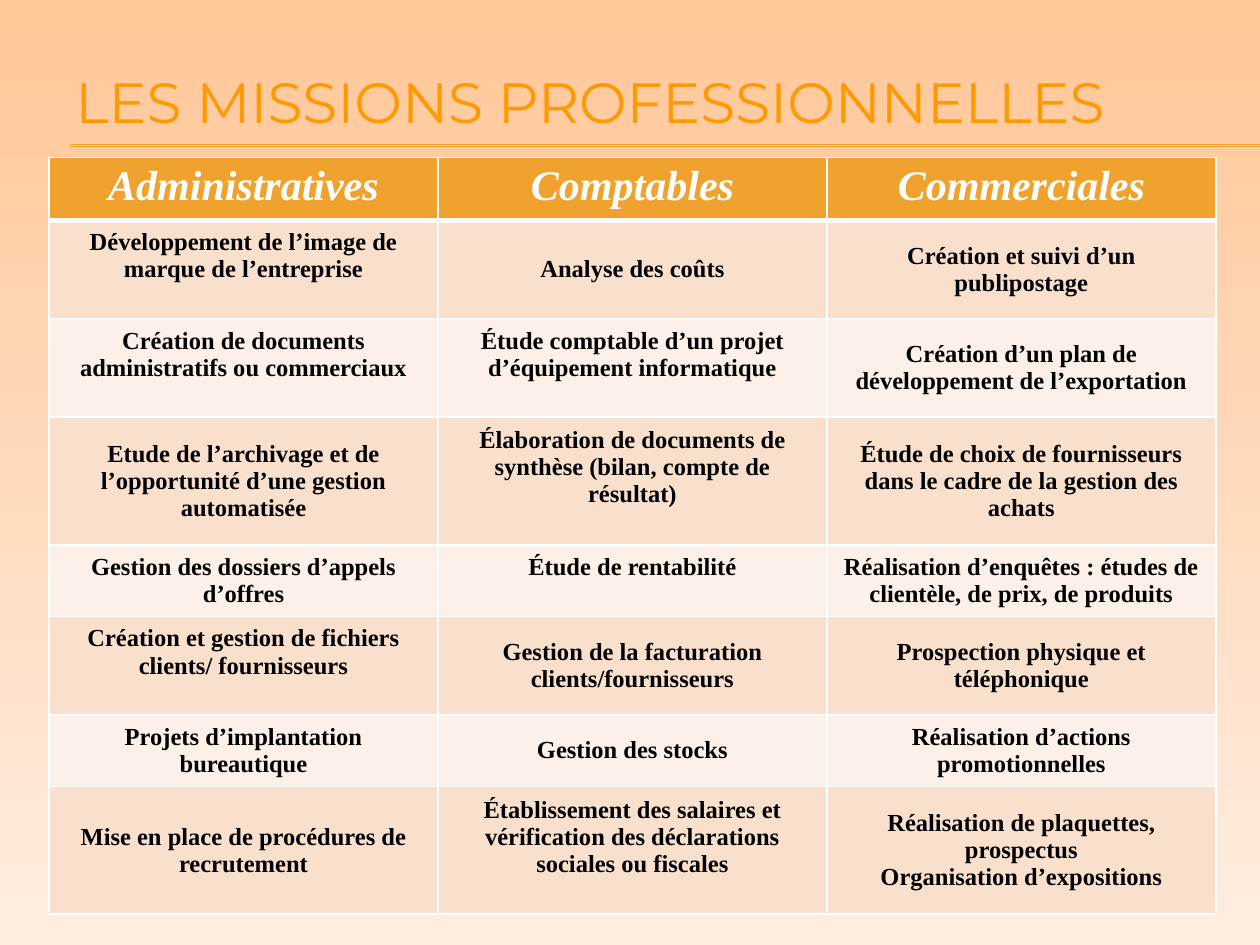
from lxml import etree
from pptx import Presentation
from pptx import util as u
from pptx.dml.color import RGBColor
from pptx.enum import shapes, text
from pptx.oxml.ns import qn

ORANGE, WHITE, BLACK = "F0A22E", "FFFFFF", "000000"
BANDS = ("F9E0CD", "FCF0E8")
TITLE_FONT = {"name": "Montserrat", "size": u.Pt(32.4)}
HEADER_FONT = {"name": "Times New Roman", "size": u.Pt(24), "bold": True, "italic": True}
MISSION_FONT = {"name": "Times New Roman", "size": u.Pt(14), "bold": True, "italic": False}

ROW_HEIGHTS = (1.27, 1.96, 1.96, 2.51, 1.37, 1.96, 1.37, 2.51)
MISSIONS = (
    ("Administratives", "Comptables", "Commerciales"),
    ("Développement de l’image de marque de l’entreprise",
     "Analyse des coûts",
     "Création et suivi d’un publipostage"),
    ("Création de documents administratifs ou commerciaux",
     "Étude comptable d’un projet d’équipement informatique",
     "Création d’un plan de développement de l’exportation"),
    ("Etude de l’archivage et de l’opportunité d’une gestion automatisée",
     "Élaboration de documents de synthèse (bilan, compte de résultat)",
     "Étude de choix de fournisseurs dans le cadre de la gestion des achats"),
    ("Gestion des dossiers d’appels d’offres",
     "Étude de rentabilité",
     "Réalisation d’enquêtes : études de clientèle, de prix, de produits"),
    ("Création et gestion de fichiers clients/ fournisseurs",
     "Gestion de la facturation clients/fournisseurs",
     "Prospection physique et téléphonique"),
    ("Projets d’implantation bureautique",
     "Gestion des stocks",
     "Réalisation d’actions promotionnelles"),
    ("Mise en place de procédures de recrutement",
     "Établissement des salaires et vérification des déclarations sociales ou fiscales",
     "Réalisation de plaquettes, prospectus\nOrganisation d’expositions"),
)
# Cells (row, column) whose text sits half a line above the middle
RAISED = {(1, 0), (2, 0), (2, 1), (3, 1), (4, 1), (5, 0), (7, 1)}


def colour(hex_value):
    return RGBColor.from_string(hex_value)


def style(font, formats, hex_value):
    for key, value in formats.items():
        setattr(font, key, value)
    font.color.rgb = colour(hex_value)


def paint_background(slide):
    fill = slide.background.fill
    fill.gradient()
    fill.gradient_angle = 270
    for stop, hex_value in zip(fill.gradient_stops, ("FFC798", "FFEDE0")):
        stop.color.rgb = colour(hex_value)


def add_title(slide, left, top, width, height):
    # Heading
    heading = slide.shapes.add_textbox(u.Cm(left), u.Cm(top), u.Cm(width), u.Cm(height))
    frame = heading.text_frame
    frame.word_wrap = True
    frame.vertical_anchor = text.MSO_ANCHOR.MIDDLE
    frame.text = "LES MISSIONS PROFESSIONNELLES"
    style(frame.paragraphs[0].runs[0].font, TITLE_FONT, "FF9900")

    # Double rule below, running to the slide's right edge
    for offset in (1.62, 1.65):
        y = u.Cm(top + offset)
        rule = slide.shapes.add_connector(
            shapes.MSO_CONNECTOR.STRAIGHT, u.Cm(left + 0.15), y, u.Cm(25.4), y)
        rule.line.color.rgb = colour(ORANGE)
        rule.line.width = u.Pt(0.75)
        etree.SubElement(rule.element.spPr, qn("a:effectLst"))


def add_borders(cell, bottom_points):
    properties = cell._tc.get_or_add_tcPr()
    for side, points in (("L", 1), ("R", 1), ("T", 1), ("B", bottom_points)):
        border = etree.SubElement(properties, qn(f"a:ln{side}"), w=str(u.Pt(points)))
        paint = etree.SubElement(border, qn("a:solidFill"))
        etree.SubElement(paint, qn("a:srgbClr"), val=WHITE)


def fill_cell(cell, words, row, raised):
    header = row == 0
    add_borders(cell, 3 if header else 1)
    cell.fill.solid()
    cell.fill.fore_color.rgb = colour(ORANGE if header else BANDS[(row - 1) % 2])
    cell.vertical_anchor = text.MSO_ANCHOR.TOP if header else text.MSO_ANCHOR.MIDDLE
    if raised:
        cell.margin_bottom = u.Cm(0.67)
    cell.text = words
    for paragraph in cell.text_frame.paragraphs:
        paragraph.alignment = text.PP_ALIGN.CENTER
        style(paragraph.runs[0].font, HEADER_FONT if header else MISSION_FONT,
              WHITE if header else BLACK)


def add_missions(slide, left, top, width):
    columns = len(MISSIONS[0])
    table = slide.shapes.add_table(
        len(MISSIONS), columns, u.Cm(left), u.Cm(top),
        u.Cm(width), u.Cm(sum(ROW_HEIGHTS))).table
    for column in table.columns:
        column.width = u.Cm(width / columns)
    for row, (height, missions) in enumerate(zip(ROW_HEIGHTS, MISSIONS)):
        table.rows[row].height = u.Cm(height)
        for column, words in enumerate(missions):
            fill_cell(table.cell(row, column), words, row, (row, column) in RAISED)


def main():
    deck = Presentation()
    deck.slide_width, deck.slide_height = u.Cm(25.4), u.Cm(19.05)
    slide = deck.slides.add_slide(deck.slide_layouts[6])
    paint_background(slide)
    add_title(slide, 1.27, 1.3, 23.62, 1.45)
    add_missions(slide, 0.99, 3.17, 23.52)
    deck.save("out.pptx")


if __name__ == "__main__":
    main()
